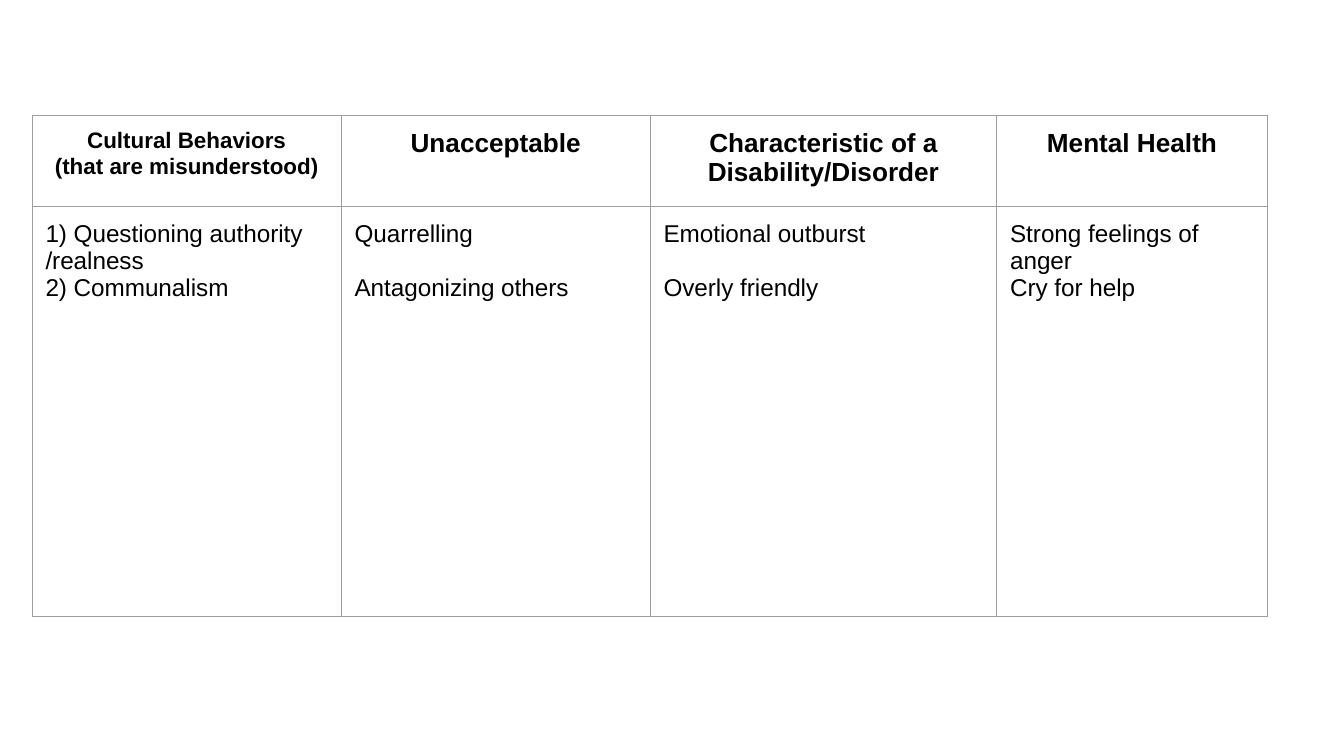
from dataclasses import dataclass

from lxml.etree import SubElement
from pptx import Presentation
from pptx.dml.color import RGBColor
from pptx.enum.text import PP_ALIGN
from pptx.oxml import parse_xml
from pptx.oxml.ns import nsdecls, qn
from pptx.table import Table, _Cell
from pptx.util import Cm, Pt


@dataclass(frozen=True)
class Theme:
    font: str = "Arial"
    text: str = "000000"
    background: str = "FFFFFF"
    border: str = "9E9E9E"
    border_width: float = 0.75
    heading_size: float = 14
    long_heading_size: float = 12
    body_size: float = 13
    item_gap: float = 14.5


@dataclass(frozen=True)
class Column:
    width: float
    heading: str
    items: str
    heading_size: float
    item_gap: float


THEME = Theme()
COLUMNS = (
    Column(5.84, "Cultural Behaviors\n(that are misunderstood)",
           "1) Questioning authority /realness\n2) Communalism",
           THEME.long_heading_size, 0),
    Column(5.84, "Unacceptable", "Quarrelling\nAntagonizing others",
           THEME.heading_size, THEME.item_gap),
    Column(6.55, "Characteristic of a Disability/Disorder",
           "Emotional outburst\nOverly friendly",
           THEME.heading_size, THEME.item_gap),
    Column(5.11, "Mental Health", "Strong feelings of anger\nCry for help",
           THEME.heading_size, 0),
)
ROW_HEIGHTS = (1.73, 7.75)
TABLE_LEFT, TABLE_TOP = 0.61, 2.18
CELL_MARGIN = 0.25


def draw_borders(cell: _Cell) -> None:
    properties = cell._tc.get_or_add_tcPr()
    for position, side in enumerate(("lnL", "lnR", "lnT", "lnB")):
        line = parse_xml(f'<a:{side} {nsdecls("a")} w="{Pt(THEME.border_width)}"/>')
        fill = SubElement(line, qn("a:solidFill"))
        SubElement(fill, qn("a:srgbClr"), val=THEME.border)
        properties.insert(position, line)


def fill_cell(cell: _Cell, text: str, size: float, heading: bool, gap: float = 0) -> None:
    cell.fill.solid()
    cell.fill.fore_color.rgb = RGBColor.from_string(THEME.background)
    cell.margin_left = cell.margin_right = Cm(CELL_MARGIN)
    cell.margin_top = cell.margin_bottom = Cm(CELL_MARGIN)
    draw_borders(cell)
    cell.text_frame.text = text
    for index, para in enumerate(cell.text_frame.paragraphs):
        para.alignment = PP_ALIGN.CENTER if heading else PP_ALIGN.LEFT
        if index and gap:
            para.space_before = Pt(gap)
        for span in para.runs:
            span.font.name = THEME.font
            span.font.size = Pt(size)
            span.font.bold = heading
            span.font.color.rgb = RGBColor.from_string(THEME.text)


def fill_table(table: Table) -> None:
    table.first_row = table.horz_banding = False
    for row, height in zip(table.rows, ROW_HEIGHTS):
        row.height = Cm(height)
    for index, column in enumerate(COLUMNS):
        table.columns[index].width = Cm(column.width)
        fill_cell(table.cell(0, index), column.heading, column.heading_size, True)
        fill_cell(table.cell(1, index), column.items, THEME.body_size, False,
                  column.item_gap)


def main() -> None:
    # Deck and blank page
    deck = Presentation()
    deck.slide_width, deck.slide_height = Cm(25.4), Cm(14.29)
    page = deck.slides.add_slide(deck.slide_layouts[6])

    # Behavior comparison table
    frame = page.shapes.add_table(
        len(ROW_HEIGHTS), len(COLUMNS), Cm(TABLE_LEFT), Cm(TABLE_TOP),
        Cm(sum(column.width for column in COLUMNS)), Cm(sum(ROW_HEIGHTS)))
    fill_table(frame.table)

    deck.save("out.pptx")


if __name__ == "__main__":
    main()
